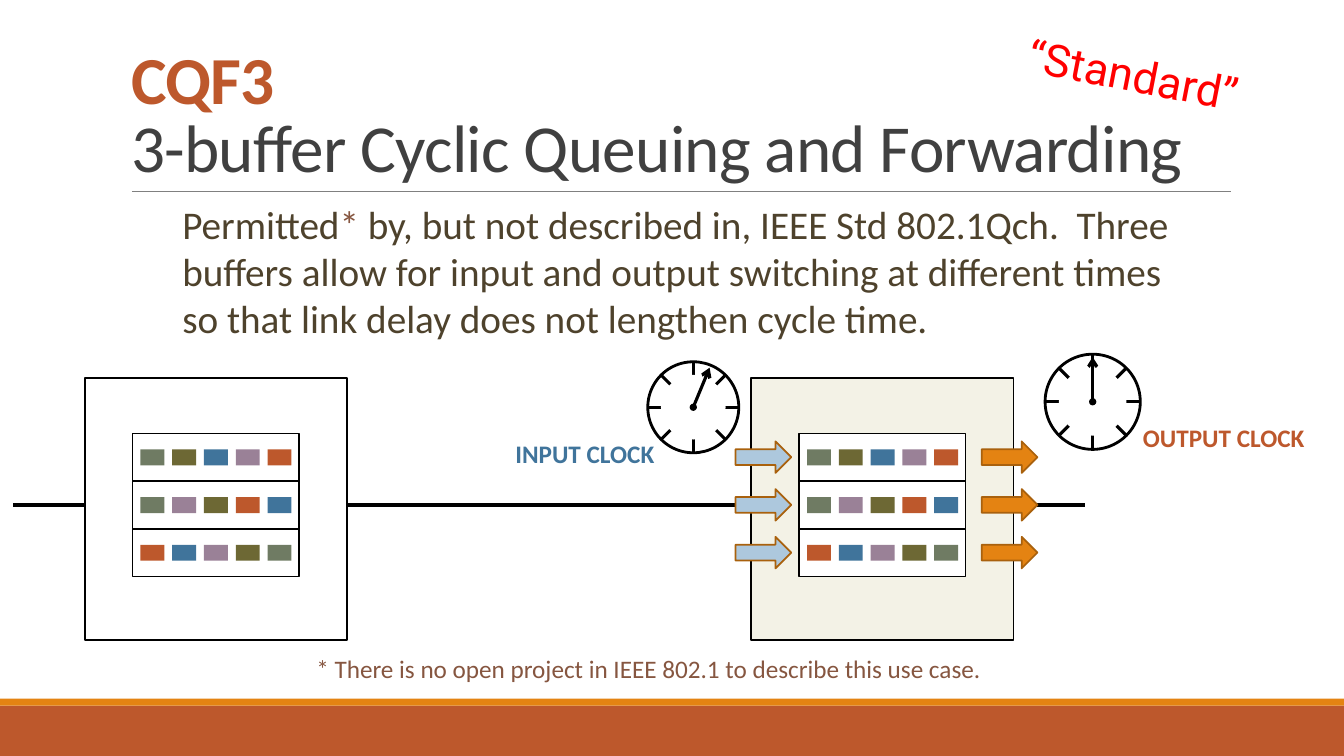
from math import cos, pi, sin

from lxml.etree import SubElement
from pptx import Presentation
from pptx.dml.color import RGBColor
from pptx.enum.shapes import MSO_CONNECTOR, MSO_SHAPE
from pptx.enum.text import MSO_ANCHOR, MSO_AUTO_SIZE, PP_ALIGN
from pptx.oxml.ns import qn
from pptx.util import Pt

BLACK = RGBColor(0x00, 0x00, 0x00)
WHITE = RGBColor(0xFF, 0xFF, 0xFF)
RUST = RGBColor(0xBD, 0x58, 0x2C)
ORANGE = RGBColor(0xE4, 0x83, 0x12)
BROWN = RGBColor(0xA9, 0x61, 0x0D)
GRAY = RGBColor(0x80, 0x80, 0x80)
CHARCOAL = RGBColor(0x40, 0x40, 0x40)
BODY = RGBColor(0x4E, 0x42, 0x2C)
FOOTNOTE = RGBColor(0x86, 0x56, 0x40)
CREAM = RGBColor(0xF3, 0xF2, 0xE6)
PALE_BLUE = RGBColor(0xAD, 0xC8, 0xDD)
BLUE = RGBColor(0x40, 0x74, 0x9B)
MAUVE = RGBColor(0x9A, 0x81, 0x97)
OLIVE = RGBColor(0x6D, 0x68, 0x34)
SAGE = RGBColor(0x6F, 0x7B, 0x63)
RED = RGBColor(0xFF, 0x00, 0x00)

BUFFERS = [
    [SAGE, OLIVE, BLUE, MAUVE, RUST],
    [SAGE, MAUVE, OLIVE, RUST, BLUE],
    [RUST, BLUE, MAUVE, OLIVE, SAGE],
]
NODE_TOP, NODE_SIZE = 270, 187.2
BUFFER_TOP, BUFFER_HEIGHT, BUFFER_WIDTH = 309.6, 34.1, 118.9
BUFFER_INSET = 34.1
PACKET_PITCH = 22.7
WIRE_Y = 360.7


def add_figure(page, kind, left, top, width, height, fill=None, line=None, weight=1.25):
    figure = page.shapes.add_shape(kind, Pt(left), Pt(top), Pt(width), Pt(height))
    figure.shadow.inherit = False
    if fill is None:
        figure.fill.background()
    else:
        figure.fill.solid()
        figure.fill.fore_color.rgb = fill
    if line is None:
        figure.line.fill.background()
    else:
        figure.line.color.rgb = line
        figure.line.width = Pt(weight)
    return figure


def add_line(page, start, end, color=BLACK, weight=2.25, arrow=False):
    line = page.shapes.add_connector(
        MSO_CONNECTOR.STRAIGHT, Pt(start[0]), Pt(start[1]), Pt(end[0]), Pt(end[1])
    )
    line.line.color.rgb = color
    line.line.width = Pt(weight)
    if arrow:
        SubElement(line.line._get_or_add_ln(), qn("a:tailEnd"), type="arrow")
    SubElement(line._element.spPr, qn("a:effectLst"))


def add_span(para, text, size, color, bold=False, font="Calibri"):
    span = para.add_run()
    span.text = text
    span.font.name = font
    span.font.size = Pt(size)
    span.font.bold = bold
    span.font.color.rgb = color
    return span


def add_text(page, left, top, width, height, spans, size, bold=False,
             align=PP_ALIGN.LEFT, font="Calibri", rotation=0):
    box = page.shapes.add_textbox(Pt(left), Pt(top), Pt(width), Pt(height))
    box.rotation = rotation
    box.text_frame.word_wrap = True
    para = box.text_frame.paragraphs[0]
    para.alignment = align
    for text, color in spans:
        add_span(para, text, size, color, bold, font)


def format_title(page):
    title = page.shapes.title
    title.left, title.top, title.width, title.height = Pt(86.4), Pt(22.3), Pt(792), Pt(114.5)
    frame = title.text_frame
    frame.vertical_anchor = MSO_ANCHOR.BOTTOM
    frame.auto_size = MSO_AUTO_SIZE.NONE
    frame.word_wrap = True
    para = frame.paragraphs[0]
    para.alignment = PP_ALIGN.LEFT
    para.line_spacing = 0.85
    spans = [add_span(para, "CQF3", 48, RUST, True)]
    para.add_line_break()
    spans.append(add_span(para, "3-buffer Cyclic Queuing and Forwarding", 48, CHARCOAL))
    for span in spans:
        span.font._element.set("spc", "-50")


def add_node(page, left, fill=None):
    add_figure(page, MSO_SHAPE.RECTANGLE, left, NODE_TOP, NODE_SIZE, NODE_SIZE, fill, BLACK)
    buffer_left = left + BUFFER_INSET
    for row, packets in enumerate(BUFFERS):
        top = BUFFER_TOP + row * BUFFER_HEIGHT
        add_figure(page, MSO_SHAPE.RECTANGLE, buffer_left, top, BUFFER_WIDTH, BUFFER_HEIGHT,
                   WHITE, BLACK)
        for column, color in enumerate(packets):
            add_figure(page, MSO_SHAPE.RECTANGLE, buffer_left + 5.7 + column * PACKET_PITCH,
                       top + 11.4, 17.1, 11.4, color)


def add_arrows(page, left, fill):
    for row in range(len(BUFFERS)):
        add_figure(page, MSO_SHAPE.RIGHT_ARROW, left, BUFFER_TOP + 5.7 + row * BUFFER_HEIGHT,
                   39.7, 22.5, fill, BROWN)


def add_disc(page, x, y, radius, fill=None, line=None):
    add_figure(page, MSO_SHAPE.OVAL, x - radius, y - radius, 2 * radius, 2 * radius,
               fill, line, 2)


def add_clock(page, x, y, radius, hand_angle):
    def rim(angle, reach):
        return x + reach * sin(angle), y - reach * cos(angle)

    for step in range(4):
        angle = step * pi / 4
        add_line(page, rim(angle, radius), rim(angle + pi, radius))
    add_disc(page, x, y, 0.71 * radius, fill=WHITE)
    add_disc(page, x, y, radius, line=BLACK)
    add_disc(page, x, y, 2.6, fill=BLACK)
    add_line(page, (x, y), rim(hand_angle, 0.94 * radius), arrow=True)


def main():
    deck = Presentation()
    deck.slide_width, deck.slide_height = Pt(960), Pt(540)
    page = deck.slides.add_slide(deck.slide_layouts[5])

    add_figure(page, MSO_SHAPE.RECTANGLE, 0, 504, 960, 36, RUST)
    add_figure(page, MSO_SHAPE.RECTANGLE, 0, 499, 960, 5, ORANGE)
    add_line(page, (94.3, 136.8), (879, 136.8), GRAY, 0.5)
    format_title(page)
    add_text(page, 123.1, 139.7, 725.8, 124.6, [
        ("Permitted", BODY),
        ("*", FOOTNOTE),
        (" by, but not described in, IEEE Std 802.1Qch.  Three buffers allow for input and "
         "output switching at different times so that link delay does not lengthen cycle time.",
         BODY),
    ], 28)

    for start, end in [(9.4, 60.5), (247.7, 536.7), (723.9, 775)]:
        add_line(page, (start, WIRE_Y), (end, WIRE_Y))
    add_node(page, 60.5)
    add_node(page, 536.7, CREAM)
    add_arrows(page, 525.4, PALE_BLUE)
    add_arrows(page, 701.3, ORANGE)
    add_clock(page, 495.2, 290.9, 32.5, pi / 8)
    add_clock(page, 780.5, 287, 34, 0)

    add_text(page, 349.9, 309.6, 124.6, 29, [("INPUT CLOCK", BLUE)], 18, True, PP_ALIGN.RIGHT)
    add_text(page, 808.6, 298.1, 130.3, 29, [("OUTPUT CLOCK", RUST)], 18, True, PP_ALIGN.RIGHT)
    add_text(page, 725.8, 39.6, 266.4, 46, [("“Standard”", RED)], 32, font="Roboto", rotation=11)
    add_text(page, 218.9, 463, 532.8, 29, [
        ("* There is no open project in IEEE 802.1 to describe this use case.", FOOTNOTE),
    ], 18)
    deck.save("out.pptx")


if __name__ == "__main__":
    main()
